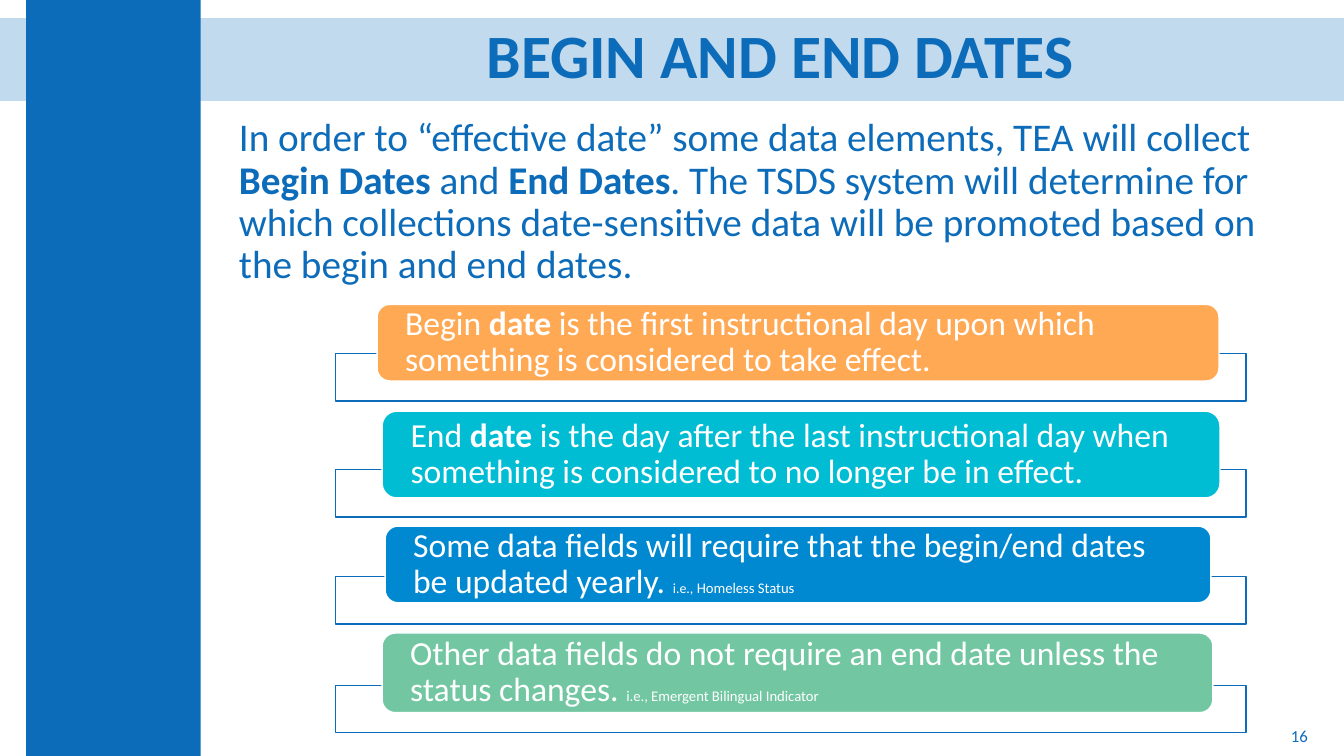
import pptx
import pptx.util
import pptx.dml.color
import pptx.enum.shapes
import pptx.enum.text
import pptx.oxml.ns
import lxml.etree

PX = 9144
COLOURS = {
    "blue": "0D6CB9",
    "white": "FFFFFF",
    "orange": "FFA954",
    "cyan": "00BDD4",
    "azure": "0088D1",
    "green": "72C7A2",
}
KINDS = pptx.enum.shapes.MSO_SHAPE
ALIGN = pptx.enum.text.PP_ALIGN
ANCHOR = pptx.enum.text.MSO_ANCHOR


def px(value):
    return pptx.util.Emu(value * PX)


def colour(name):
    return pptx.dml.color.RGBColor.from_string(COLOURS[name])


def apply(target, values):
    for name, value in values.items():
        setattr(target, name, value)


class SlideBuilder:
    font = "Calibri"

    def __init__(self, page):
        self.page = page

    def shape(self, kind, area, fill, line=None, opacity=100):
        shape = self.page.shapes.add_shape(kind, *map(px, area))
        shape.shadow.inherit = False
        shape.fill.solid()
        shape.fill.fore_color.rgb = colour(fill)
        if opacity < 100:
            shade = next(shape.element.iter(pptx.oxml.ns.qn("a:srgbClr")))
            alpha = lxml.etree.SubElement(shade, pptx.oxml.ns.qn("a:alpha"))
            alpha.set("val", str(opacity * 1000))
        if line:
            shape.line.color.rgb = colour(line)
            shape.line.width = pptx.util.Pt(1)
        else:
            shape.line.fill.background()
        return shape

    def set_text(self, shape, spans, ink, frame, para):
        text_frame = shape.text_frame
        apply(text_frame, {
            "word_wrap": True,
            "auto_size": pptx.enum.text.MSO_AUTO_SIZE.NONE,
            **frame,
        })
        paragraph = text_frame.paragraphs[0]
        apply(paragraph, {"space_before": pptx.util.Pt(0), **para})
        for text, size, bold in spans:
            span = paragraph.add_run()
            span.text = text
            apply(span.font, {
                "name": self.font,
                "size": pptx.util.Pt(size),
                "bold": bold,
            })
            span.font.color.rgb = colour(ink)

    def placeholder(self, index, area, spans, frame, para):
        holder = self.page.placeholders[index]
        names = ("left", "top", "width", "height")
        apply(holder, dict(zip(names, map(px, area))))
        self.page.shapes.element.append(holder.element)
        properties = holder.text_frame.paragraphs[0]._p.get_or_add_pPr()
        for name in ("marL", "indent"):
            properties.set(name, "0")
        lxml.etree.SubElement(properties, pptx.oxml.ns.qn("a:buNone"))
        self.set_text(holder, spans, "blue", frame, para)

    def label(self, area, spans, frame, para):
        box = self.page.shapes.add_textbox(*map(px, area))
        self.set_text(box, spans, "blue", frame, para)

    def card(self, tray_top, area, fill, spans):
        self.shape(KINDS.RECTANGLE, (333, tray_top, 903, 47), "white", "blue", 90)
        card = self.shape(KINDS.ROUNDED_RECTANGLE, area, fill, "white")
        frame = {
            "vertical_anchor": ANCHOR.MIDDLE,
            "margin_left": px(24),
            "margin_right": px(24),
            "margin_top": 0,
            "margin_bottom": 0,
        }
        para = {"alignment": ALIGN.LEFT, "line_spacing": 0.9}
        self.set_text(card, spans, "white", frame, para)


CARDS = [
    (351, (374, 302, 835, 76), "orange", [
        ("Begin ", 24, False),
        ("date", 24, True),
        (" is the first instructional day upon which something is "
         "considered to take effect.", 24, False),
    ]),
    (466, (379, 408, 831, 86), "cyan", [
        ("End ", 24, False),
        ("date", 24, True),
        (" is the day after the last instructional day when something is "
         "considered to no longer be in effect.", 24, False),
    ]),
    (572, (382, 522, 819, 76), "azure", [
        ("Some data fields will require that the begin/end dates be "
         "updated yearly. ", 24, False),
        ("i.e.,", 10, False),
        (" Homeless Status", 10.5, False),
    ]),
    (680, (379, 628, 824, 79), "green", [
        ("Other data fields do not require an end date unless the status "
         "changes. ", 24, False),
        ("i.e., Emergent Bilingual Indicator", 10.5, False),
    ]),
]

INTRO = [
    ("In order to “effective date” some data elements, TEA will collect ", 28, False),
    ("Begin Dates ", 28, True),
    ("and ", 28, False),
    ("End Dates", 28, True),
    (". The TSDS system will determine for which collections date-sensitive "
     "data will be promoted based on the begin and end dates.", 28, False),
]


def main():
    deck = pptx.Presentation()
    apply(deck, {"slide_width": px(1333), "slide_height": px(750)})
    builder = SlideBuilder(deck.slides.add_slide(deck.slide_layouts[1]))

    builder.shape(KINDS.RECTANGLE, (0, 18, 1333, 82), "blue", opacity=25)
    builder.shape(KINDS.RECTANGLE, (26, 0, 173, 750), "blue")
    builder.placeholder(
        0, (254, 17, 1040, 82), [("BEGIN AND END DATES", 44, True)],
        {"vertical_anchor": ANCHOR.MIDDLE},
        {"alignment": ALIGN.CENTER, "line_spacing": 0.9},
    )
    builder.placeholder(
        1, (227, 112, 1053, 443), INTRO,
        {"vertical_anchor": ANCHOR.TOP},
        {"alignment": ALIGN.LEFT, "line_spacing": 0.9},
    )
    for card in CARDS:
        builder.card(*card)
    builder.label(
        (1007, 710, 300, 40), [("16", 12, False)],
        {"vertical_anchor": ANCHOR.MIDDLE}, {"alignment": ALIGN.RIGHT},
    )
    deck.save("out.pptx")


if __name__ == "__main__":
    main()
